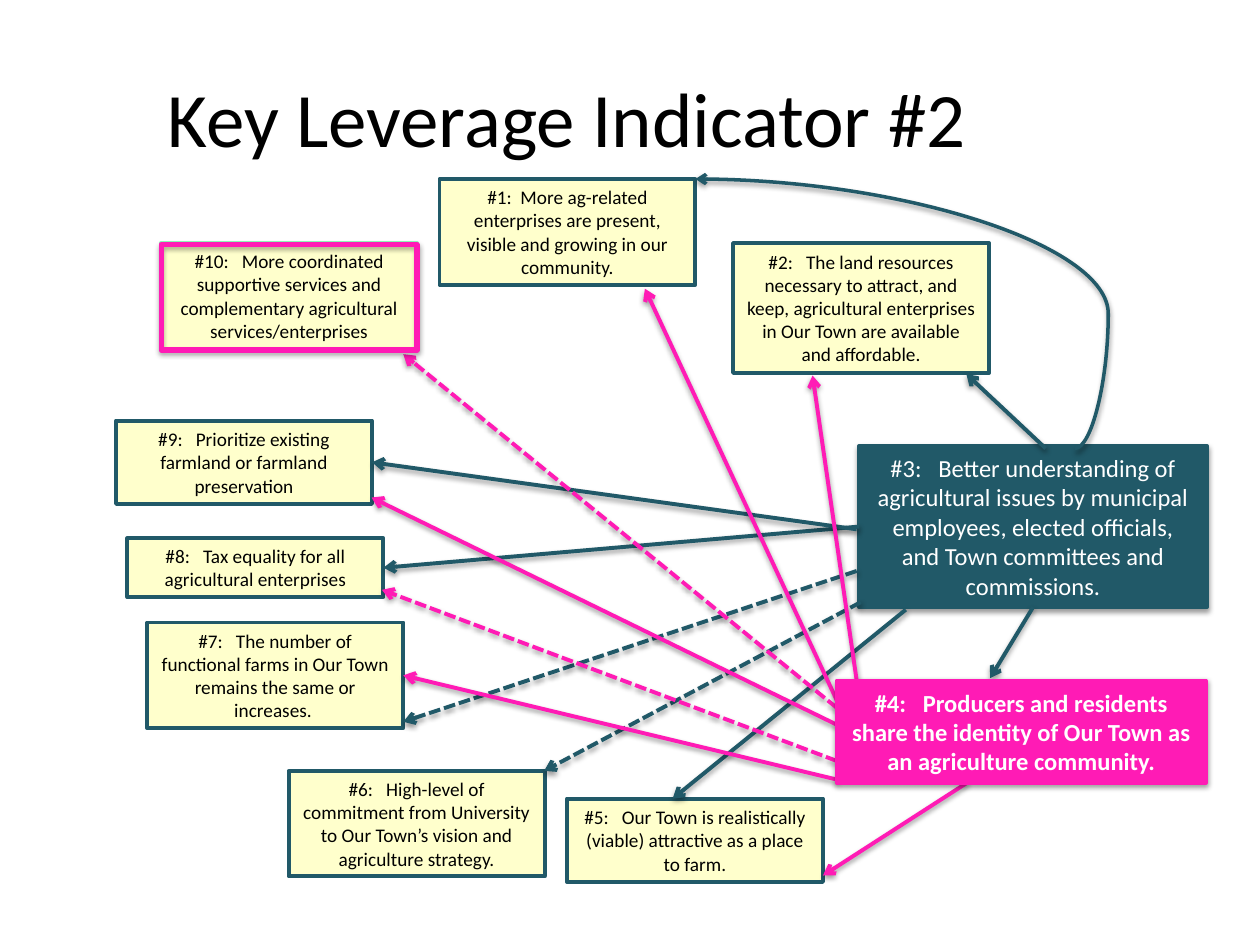
from pptx import Presentation
from pptx.dml.color import RGBColor
from pptx.enum.dml import MSO_LINE
from pptx.enum.shapes import MSO_CONNECTOR as CONN, MSO_SHAPE
from pptx.enum.text import MSO_ANCHOR, MSO_AUTO_SIZE as AUTO, PP_ALIGN
from pptx.oxml.ns import qn
from pptx.util import Cm, Pt
from lxml.etree import SubElement

COLORS = {"cream": "FFFFCC", "teal": "215968", "pink": "FF1BB5",
          "mint": "8EFFBC", "black": "000000", "white": "FFFFFF"}
FONT = "Calibri"
BOX_W = 5.16
TOP, LEFT, BOTTOM, RIGHT = range(4)

INDICATORS = [
    (1, 8.86, 3.61, 2.13, "#1:  More ag-related enterprises are present, visible and growing in our community."),
    (2, 14.78, 4.9, 2.62, "#2:   The land resources necessary to attract, and keep, agricultural enterprises "
                          "in Our Town are available and affordable."),
    (5, 11.43, 16.1, 1.68, "#5:   Our Town is realistically (viable) attractive as a place to farm."),
    (6, 5.82, 15.54, 2.13, "#6:   High-level of commitment from University to Our Town’s vision "
                           "and agriculture strategy."),
    (7, 2.97, 12.55, 2.13, "#7:   The number of functional farms in Our Town remains the same or increases. "),
    (8, 2.57, 10.85, 1.19, "#8:   Tax equality for all agricultural enterprises"),
    (9, 2.34, 8.48, 1.68, "#9:   Prioritize existing farmland or farmland preservation"),
    (10, 3.25, 4.9, 2.13, "#10:   More coordinated supportive services and complementary agricultural "
                          "services/enterprises"),
]
UNDERSTANDING = ("#3:   Better understanding of agricultural issues by municipal employees, "
                 "elected officials, and Town committees and commissions.")
IDENTITY = "#4:   Producers and residents share the identity of Our Town as an agriculture community."

TEAL_LINKS = [
    ((18.26, 12.29), (13.56, 16.1), False),
    ((17.35, 12.14), (10.97, 15.54), True),
    ((17.27, 11.51), (8.13, 14.55), True),
    ((21.08, 9.04), (19.48, 7.54), False),
]
PINK_LINKS = [
    ((19.51, 15.77), (16.59, 17.65), False),
    ((16.87, 14.12), (13, 5.82), False),
    ((17.27, 13.72), (16.38, 7.57), False),
    ((16.87, 15.34), (7.7, 11.89), True),
    ((16.87, 14.61), (7.49, 10.03), False),
    ((16.87, 14.27), (8.13, 7.14), True),
]


def rgb(name):
    """Return the named colour."""
    return RGBColor.from_string(COLORS[name])


def add_shadow(sp, alpha=38):
    """Give a shape or connector a soft shadow below it."""
    sp_pr = sp._element.spPr
    effects = sp_pr.find(qn("a:effectLst"))
    if effects is None:
        effects = SubElement(sp_pr, qn("a:effectLst"))
    shadow = SubElement(effects, qn("a:outerShdw"), blurRad=str(Pt(3.1)), dist=str(Pt(1.6)),
                        dir="5400000", rotWithShape="0")
    color = SubElement(shadow, qn("a:srgbClr"), val=COLORS["black"])
    SubElement(color, qn("a:alpha"), val=str(alpha * 1000))


def write(sp, text, size, color, bold=False):
    """Set centred, wrapped text in a shape."""
    tf = sp.text_frame
    tf.word_wrap = True
    tf.text = text
    p = tf.paragraphs[0]
    p.alignment = PP_ALIGN.CENTER
    font = p.runs[0].font
    font.name, font.size, font.bold = FONT, Pt(size), bold
    font.color.rgb = rgb(color)


def add_title(s, text):
    """Add the slide title."""
    sp = s.shapes.add_textbox(Cm(0), Cm(0.76), Cm(22.86), Cm(3.18))
    write(sp, text, 44, "black")
    sp.text_frame.vertical_anchor = MSO_ANCHOR.MIDDLE


def add_rect(s, x, y, w, h, line, fill=None, width=2.25):
    """Add a rectangle, unfilled unless a fill is given."""
    sp = s.shapes.add_shape(MSO_SHAPE.RECTANGLE, Cm(x), Cm(y), Cm(w), Cm(h))
    sp.shadow.inherit = False
    if fill:
        sp.fill.solid()
        sp.fill.fore_color.rgb = rgb(fill)
    else:
        sp.fill.background()
    sp.line.color.rgb = rgb(line)
    sp.line.width = Pt(width)
    return sp


def add_indicator(s, x, y, h, text, line="teal"):
    """Add a cream indicator box."""
    sp = add_rect(s, x, y, BOX_W, h, line, "cream")
    write(sp, text, 11, "black")
    sp.text_frame.auto_size = AUTO.SHAPE_TO_FIT_TEXT
    return sp


def add_lever(s, x, y, w, h, text, color, bold=False):
    """Add a large coloured leverage box."""
    sp = add_rect(s, x, y, w, h, color, color)
    write(sp, text, 14, "white", bold)
    sp.text_frame.auto_size = AUTO.SHAPE_TO_FIT_TEXT
    add_shadow(sp)
    return sp


def add_arrow(s, start, end, color, dashed=False, kind=CONN.STRAIGHT, width=2.25):
    """Add a shadowed arrow between two points."""
    cx = s.shapes.add_connector(kind, *map(Cm, start + end))
    cx.line.color.rgb = rgb(color)
    cx.line.width = Pt(width)
    if dashed:
        cx.line.dash_style = MSO_LINE.SQUARE_DOT
    SubElement(cx.line._get_or_add_ln(), qn("a:tailEnd"), type="arrow")
    add_shadow(cx)
    return cx


def add_curve(s, start, end, color, bend):
    """Add a curved arrow that bends out past its start."""
    cx = add_arrow(s, start, end, color, kind=CONN.CURVE, width=2)
    geom = cx._element.spPr.find(qn("a:prstGeom"))
    guides = geom.find(qn("a:avLst"))
    if guides is None:
        guides = SubElement(geom, qn("a:avLst"))
    SubElement(guides, qn("a:gd"), name="adj1", fmla=f"val {bend}")


def main():
    """Build the slide."""
    prs = Presentation()
    prs.slide_width, prs.slide_height = Cm(25.4), Cm(19.05)
    s = prs.slides.add_slide(prs.slide_layouts[6])

    boxes = {number: add_indicator(s, x, y, h, text, "mint" if number == 10 else "teal")
             for number, x, y, h, text in INDICATORS}
    boxes[3] = add_lever(s, 17.32, 8.99, 7.01, 3.25, UNDERSTANDING, "teal")

    to_identity = add_arrow(s, (20.83, 12.24), (19.96, 13.67), "teal")
    to_identity.begin_connect(boxes[3], BOTTOM)
    add_curve(s, (21.67, 9.04), (14.02, 3.61), "teal", -8800)
    for start, end, dashed in TEAL_LINKS:
        add_arrow(s, start, end, "teal", dashed)
    to_tax = add_arrow(s, (17.32, 10.62), (7.73, 11.44), "teal")
    to_tax.begin_connect(boxes[3], LEFT)
    to_tax.end_connect(boxes[8], RIGHT)
    to_farmland = add_arrow(s, (17.27, 10.67), (7.5, 9.32), "teal")
    to_farmland.end_connect(boxes[9], RIGHT)

    add_title(s, "Key Leverage Indicator #2")
    for start, end, dashed in PINK_LINKS:
        add_arrow(s, start, end, "pink", dashed)
    to_farms = add_arrow(s, (16.89, 15.72), (8.13, 13.61), "pink")
    to_farms.end_connect(boxes[7], RIGHT)

    add_shadow(add_rect(s, 3.25, 4.93, BOX_W, 2.13, "pink", width=3), 35)
    add_lever(s, 16.87, 13.72, 7.44, 2.06, IDENTITY, "pink", bold=True)
    prs.save("out.pptx")


if __name__ == "__main__":
    main()
